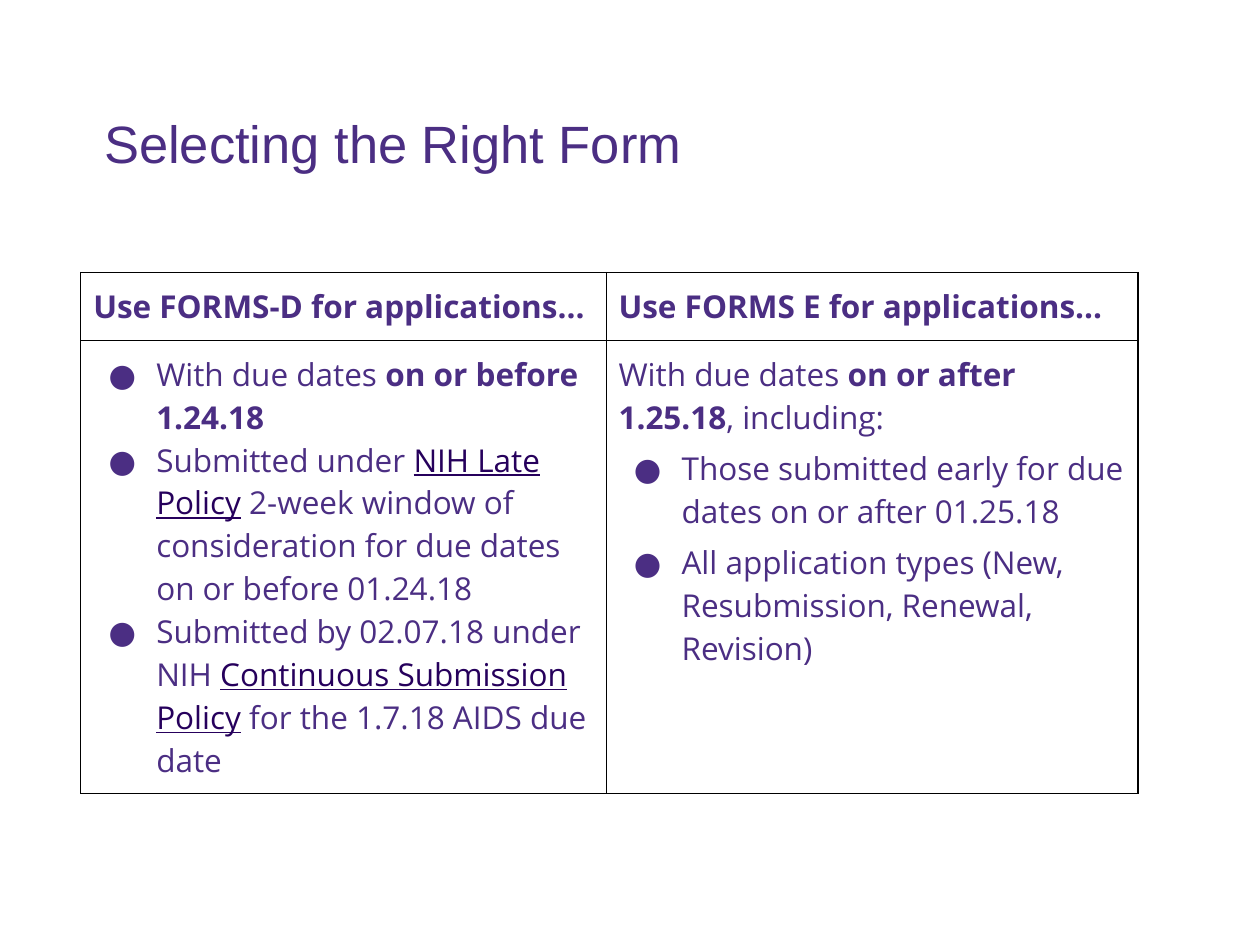
"""Build the slide that compares the FORMS-D and FORMS-E application forms."""
import pptx
import pptx.dml.color
import pptx.enum.text
import pptx.oxml
import pptx.oxml.ns
import pptx.util

Cm, Pt = pptx.util.Cm, pptx.util.Pt
RGBColor = pptx.dml.color.RGBColor
Anchor = pptx.enum.text.MSO_ANCHOR

PURPLE = RGBColor(0x4B, 0x2E, 0x83)
DEEP_PURPLE = RGBColor(0x26, 0x00, 0x5C)
BLACK = RGBColor(0, 0, 0)

PLAIN = {}
BOLD = {"bold": True}
POLICY = {"color": DEEP_PURPLE, "underline": True}

HEADING = "Selecting the Right Form"
FORM_HEADS = ["Use FORMS-D for applications...", "Use FORMS E for applications..."]
FORMS_D = [
    (True, 4.8, [("With due dates ", PLAIN), ("on or before 1.24.18", BOLD)]),
    (True, 0, [("Submitted under ", PLAIN), ("NIH Late Policy", POLICY),
               (" 2-week window of consideration for due dates on or before 01.24.18", PLAIN)]),
    (True, 0, [("Submitted by 02.07.18 under NIH ", PLAIN),
               ("Continuous Submission Policy", POLICY),
               (" for the 1.7.18 AIDS due date", PLAIN)]),
]
FORMS_E = [
    (False, 4.8, [("With due dates ", PLAIN), ("on or after 1.25.18", BOLD),
                  (", including:", PLAIN)]),
    (True, 4.8, [("Those submitted early for due dates on or after 01.25.18", PLAIN)]),
    (True, 4.8, [("All application types (New, Resubmission, Renewal, Revision)", PLAIN)]),
]
FORM_ROWS = [
    [[(False, 4.8, [(head, BOLD)])] for head in FORM_HEADS],
    [FORMS_D, FORMS_E],
]
COLUMN_WIDTHS = [Cm(10.59), Cm(10.72)]
ROW_HEIGHTS = [Cm(1.37), Cm(8.13)]
PADDING = Cm(0.25)


def add_text(paragraph, text, font="Open Sans", size=18, color=PURPLE,
             bold=False, underline=False):
    run = paragraph.add_run()
    run.text = text
    run.font.name = font
    run.font.size = Pt(size)
    run.font.color.rgb = color
    run.font.bold = bold
    run.font.underline = underline


def add_bullet(paragraph):
    properties = paragraph._p.get_or_add_pPr()
    properties.set("marL", str(Cm(1.27)))
    properties.set("indent", str(-Cm(0.96)))
    namespace = pptx.oxml.ns.nsdecls("a")
    for markup in (f'<a:buClr {namespace}><a:srgbClr val="{PURPLE}"/></a:buClr>',
                   f'<a:buFont {namespace} typeface="Open Sans"/>',
                   f'<a:buChar {namespace} char="●"/>'):
        properties.append(pptx.oxml.parse_xml(markup))


def add_borders(cell):
    properties = cell._tc.get_or_add_tcPr()
    for position, side in enumerate(("lnL", "lnR", "lnT", "lnB")):
        properties.insert(position, pptx.oxml.parse_xml(
            f'<a:{side} {pptx.oxml.ns.nsdecls("a")} w="{Pt(0.75)}">'
            f'<a:solidFill><a:srgbClr val="{BLACK}"/></a:solidFill></a:{side}>'))


def set_padding(holder):
    holder.margin_left = holder.margin_right = PADDING
    holder.margin_top = holder.margin_bottom = PADDING


def fill_cell(cell, paragraphs):
    set_padding(cell)
    cell.fill.background()
    add_borders(cell)
    for index, (bulleted, space, runs) in enumerate(paragraphs):
        frame = cell.text_frame
        paragraph = frame.add_paragraph() if index else frame.paragraphs[0]
        paragraph.space_before = Pt(space)
        if bulleted:
            add_bullet(paragraph)
        for text, style in runs:
            add_text(paragraph, text, **style)


def add_heading(slide):
    heading = slide.shapes.title
    heading.left, heading.top = Cm(1.85), Cm(1.04)
    heading.width, heading.height = Cm(22.73), Cm(2.74)
    frame = heading.text_frame
    set_padding(frame)
    frame.word_wrap = True
    frame.auto_size = pptx.enum.text.MSO_AUTO_SIZE.NONE
    frame.vertical_anchor = Anchor.BOTTOM
    paragraph = frame.paragraphs[0]
    paragraph.alignment = pptx.enum.text.PP_ALIGN.LEFT
    paragraph.line_spacing = 0.9
    add_text(paragraph, HEADING, font="Arial", size=30)


def add_forms(slide):
    forms = slide.shapes.add_table(
        len(FORM_ROWS), len(COLUMN_WIDTHS), Cm(1.63), Cm(5.49),
        sum(COLUMN_WIDTHS), sum(ROW_HEIGHTS)).table
    forms.first_row = forms.horz_banding = False
    for column, width in zip(forms.columns, COLUMN_WIDTHS):
        column.width = width
    for row, height, contents in zip(forms.rows, ROW_HEIGHTS, FORM_ROWS):
        row.height = height
        for cell, paragraphs in zip(row.cells, contents):
            fill_cell(cell, paragraphs)
    forms.cell(1, 0).vertical_anchor = Anchor.MIDDLE


def main():
    deck = pptx.Presentation()
    deck.slide_width, deck.slide_height = Cm(25.4), Cm(19.05)
    slide = deck.slides.add_slide(deck.slide_layouts.get_by_name("Title Only"))
    add_heading(slide)
    add_forms(slide)
    deck.save("out.pptx")


if __name__ == "__main__":
    main()
